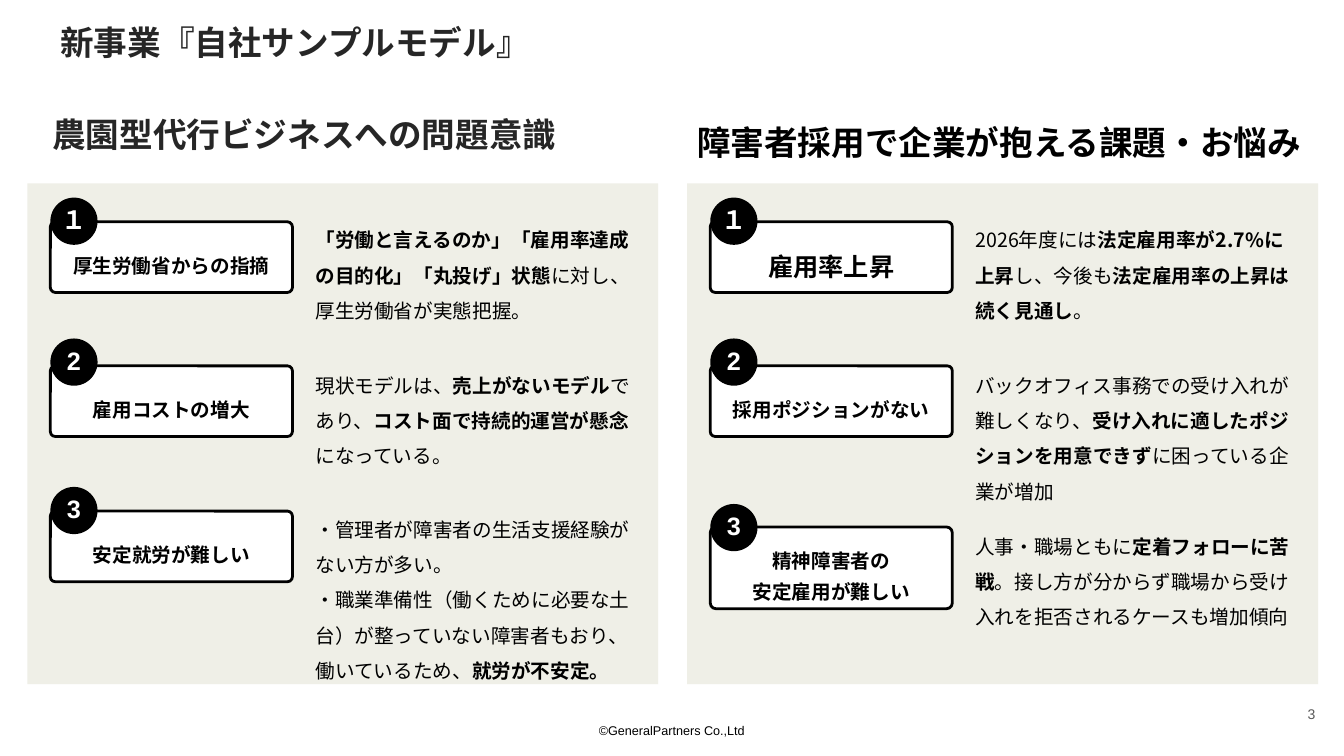
from lxml import etree
from pptx import Presentation
from pptx.dml.color import RGBColor
from pptx.enum.shapes import MSO_SHAPE
from pptx.enum.text import MSO_ANCHOR, MSO_AUTO_SIZE, PP_ALIGN
from pptx.oxml.ns import qn
from pptx.util import Cm, Pt

LEFT, CENTER, RIGHT = PP_ALIGN.LEFT, PP_ALIGN.CENTER, PP_ALIGN.RIGHT
TOP, MIDDLE, BOTTOM = MSO_ANCHOR.TOP, MSO_ANCHOR.MIDDLE, MSO_ANCHOR.BOTTOM
RECT, ROUNDED, OVAL = MSO_SHAPE.RECTANGLE, MSO_SHAPE.ROUNDED_RECTANGLE, MSO_SHAPE.OVAL
GROW = MSO_AUTO_SIZE.SHAPE_TO_FIT_TEXT
JAPANESE, LATIN = "Noto Sans CJK JP", "Arial"
BLACK, WHITE, DARK, GREY, BEIGE = "000000", "FFFFFF", "262626", "595959", "EFEFE7"

deck = Presentation()
deck.slide_width, deck.slide_height = Cm(33.87), Cm(19.05)
slide = deck.slides.add_slide(deck.slide_layouts[6])


def add_block(left, top, width, height, preset=None, fill=None, outline=None):
    """Add a text box, or a filled shape when a preset is given."""
    bounds = Cm(left), Cm(top), Cm(width), Cm(height)
    if preset is None:
        return slide.shapes.add_textbox(*bounds)
    block = slide.shapes.add_shape(preset, *bounds)
    block.shadow.inherit = False
    block.fill.solid()
    block.fill.fore_color.rgb = RGBColor.from_string(fill)
    if outline:
        block.line.color.rgb = RGBColor.from_string(outline)
        block.line.width = Pt(2)
    else:
        block.line.fill.background()
    return block


def write(block, paragraphs, size, color=BLACK, font=JAPANESE, align=LEFT,
          anchor=MIDDLE, insets=(0.25, 0.13, 0.25, 0.13), spacing=1.0, grow=False):
    """Fill a block with paragraphs, each a list of (text, bold) runs."""
    frame = block.text_frame
    frame.word_wrap = True
    frame.vertical_anchor = anchor
    frame.margin_left, frame.margin_top, frame.margin_right, frame.margin_bottom = map(Cm, insets)
    if grow:
        frame.auto_size = GROW
    for index, runs in enumerate(paragraphs):
        paragraph = frame.add_paragraph() if index else frame.paragraphs[0]
        paragraph.alignment = align
        paragraph.line_spacing = spacing
        for text, bold in runs:
            run = paragraph.add_run()
            run.text = text
            run.font.size = Pt(size)
            run.font.bold = bold
            run.font.name = font
            run.font.color.rgb = RGBColor.from_string(color)
            # Typeface for the Japanese characters
            etree.SubElement(run.font._element, qn("a:ea"), typeface=font)


# Footer and page number
write(add_block(3.71, 18.08, 26.44, 0.66), [[("©GeneralPartners Co.,Ltd", False)]], 9,
      font=LATIN, align=CENTER, anchor=BOTTOM, grow=True)
write(add_block(31.37, 17.27, 2.03, 1.45), [[("3", False)]], 10, GREY, LATIN, RIGHT)

# Title and column headings: text, left, top, width, colour, line spacing
headings = [
    ("新事業『自社サンプルモデル』", 1.27, 0.43, 19.81, DARK, 1.0),
    ("農園型代行ビジネスへの問題意識", 1.07, 2.74, 13.31, DARK, 1.0),
    ("障害者採用で企業が抱える課題・お悩み", 17.32, 2.69, 15.9, BLACK, 1.5),
]
for heading, left, top, width, color, spacing in headings:
    write(add_block(left, top, width, 1.27), [[(heading, True)]], 24, color,
          spacing=spacing, grow=True)

# Issues per column: label lines, label size, label height,
# tops of badge, label and description, description height, description
concerns = [
    (["厚生労働省からの指摘"], 14, 1.78, 4.98, 5.59, 5.46, 2.39, [[
        ("「労働と言えるのか」「雇用率達成の目的化」「丸投げ」状態", True),
        ("に対し、 厚生労働省が実態把握。", False)]]),
    (["雇用コストの増大"], 14, 1.78, 8.53, 9.22, 9.12, 2.39, [[
        ("現状モデルは、", False), ("売上がないモデル", True), ("であり、", False),
        ("コスト面で持続的運営が懸念", True), ("になっている。", False)]]),
    (["安定就労が難しい"], 14, 1.78, 12.27, 12.88, 12.75, 4.19, [
        [("・管理者が障害者の生活支援経験がない方が多い。", False)],
        [("・職業準備性（働くために必要な土台）が整っていない障害者もおり、働いているため、", False),
         ("就労が不安定。", True)]]),
]
hiring_challenges = [
    (["雇用率上昇"], 18, 1.78, 4.98, 5.59, 5.46, 2.39, [[
        ("2026年度には", False), ("法定雇用率が2.7%に上昇", True), ("し、今後も", False),
        ("法定雇用率の上昇は続く見通し", True), ("。", False)]]),
    (["採用ポジションがない"], 14, 1.78, 8.53, 9.22, 9.12, 3.3, [[
        ("バックオフィス事務での受け入れが難しくなり、", False),
        ("受け入れに適したポジションを用意できず", True),
        ("に困っている企業が増加", False)]]),
    (["精神障害者の", "安定雇用が難しい"], 14, 2.06, 12.7, 13.28, 13.18, 2.39, [[
        ("人事・職場ともに", False), ("定着フォローに苦戦", True),
        ("。接し方が分からず職場から受け入れを拒否されるケースも増加傾向", False)]]),
]

# Two panels, each with numbered issues
for panel_left, issues in ((0.69, concerns), (17.32, hiring_challenges)):
    add_block(panel_left, 4.62, 15.9, 12.62, RECT, BEIGE)
    label_left = panel_left + 0.58
    for number, issue in zip("１23", issues):
        (label_lines, label_size, label_height, badge_top, label_top,
         description_top, description_height, description) = issue

        write(add_block(panel_left + 7.26, description_top, 7.95, description_height),
              description, 14, anchor=TOP, insets=(0, 0, 0, 0), spacing=1.5, grow=True)

        label = add_block(label_left, label_top, 6.1, label_height, ROUNDED, WHITE, BLACK)
        label.adjustments[0] = 0.07
        write(label, [[(line, True)] for line in label_lines], label_size,
              align=CENTER, insets=(0, 0.25, 0, 0), spacing=1.3)

        badge = add_block(label_left, badge_top, 1.19, 1.19, OVAL, BLACK)
        write(badge, [[(number, True)]], 18, WHITE, LATIN, CENTER, insets=(0, 0, 0, 0.1))

deck.save("out.pptx")
